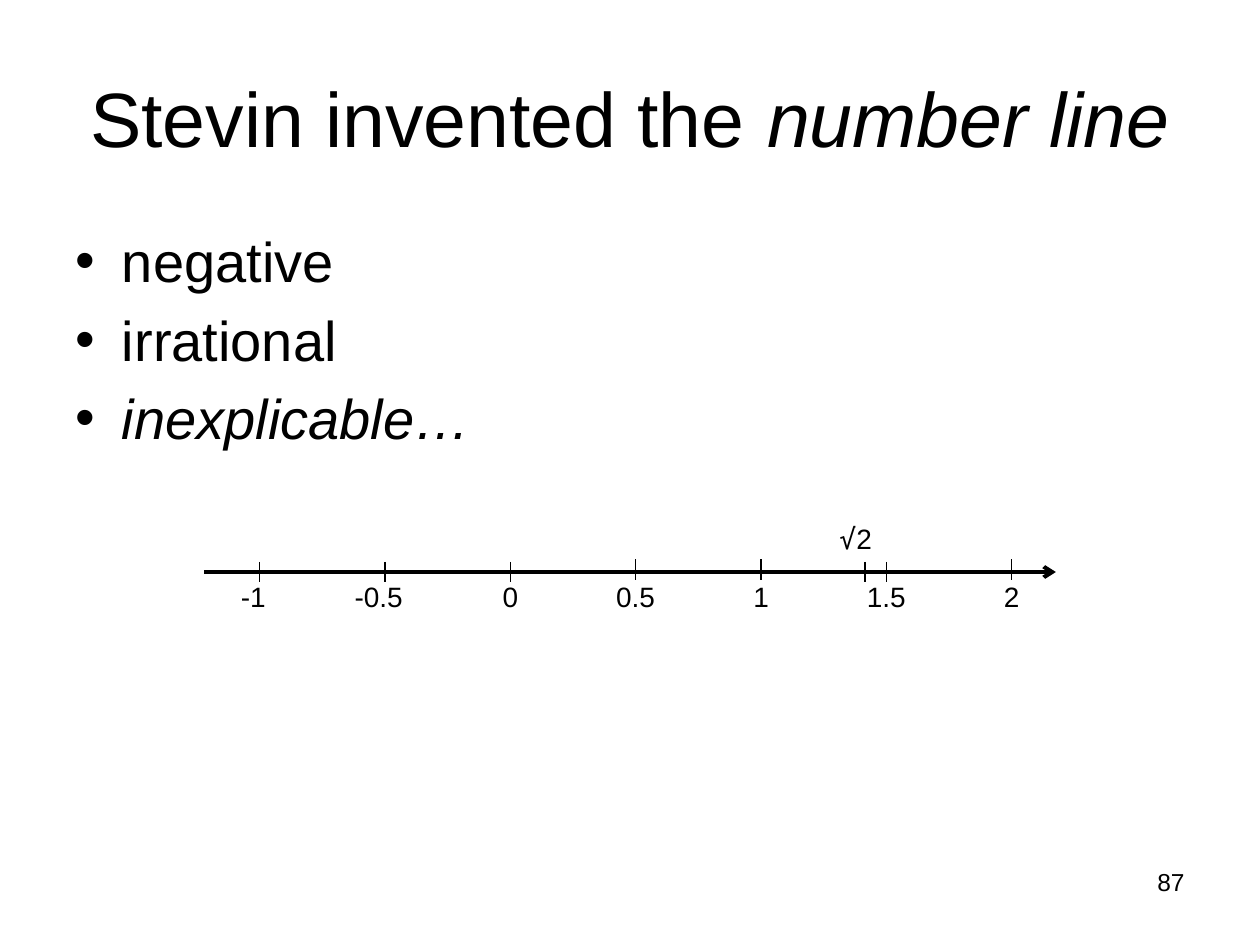
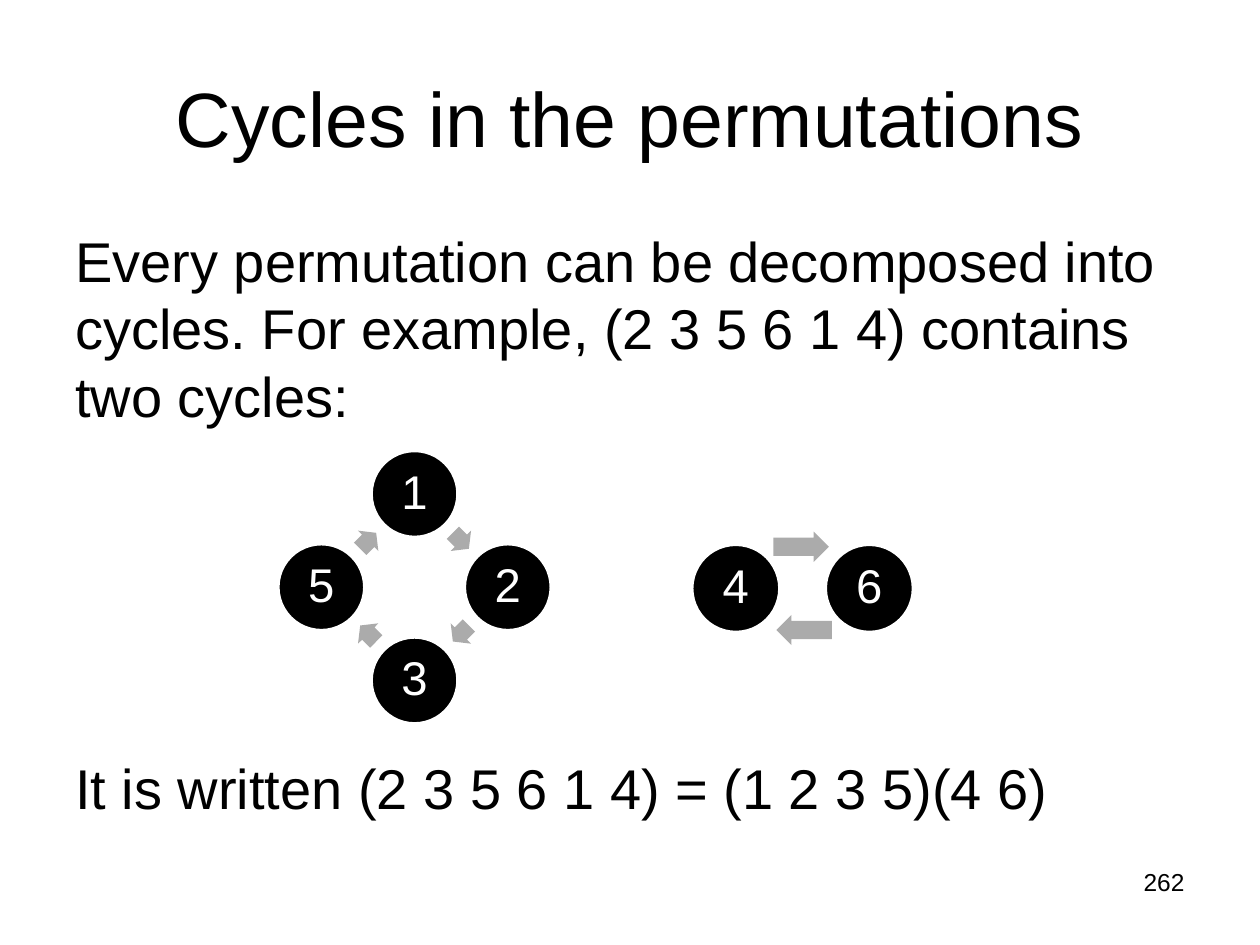
import math

import pptx
import pptx.dml.color
import pptx.enum.shapes
import pptx.enum.text
import pptx.oxml.ns
import pptx.util
from lxml import etree

Inches = pptx.util.Inches
Pt = pptx.util.Pt
RGBColor = pptx.dml.color.RGBColor
Shape = pptx.enum.shapes.MSO_SHAPE
Align = pptx.enum.text.PP_ALIGN
Anchor = pptx.enum.text.MSO_ANCHOR
qn = pptx.oxml.ns.qn

BLACK = RGBColor(0, 0, 0)
WHITE = RGBColor(255, 255, 255)
GRAY = RGBColor(0xAB, 0xAB, 0xAB)
FONT = "Arial"
MATH = "DejaVu Sans Mono"
TITLE = (0.5, 0.3, 9, 1.25)
BODY = (0.5, 1.75, 9, 1.98)
INTRO = (0.5, 1.75, 9, 1.75)
CLOSE = (0.5, 5.93, 9, 0.77)
FOOT = (7.17, 6.83, 2.33, 0.52)


def style(run, size, color=BLACK, name=FONT, italic=False):
    font = run.font
    font.size = Pt(size)
    font.name = name
    font.color.rgb = color
    font.italic = italic


def add_text(slide, box, text, size, align=Align.LEFT, wrap=True):
    frame = slide.shapes.add_textbox(*map(Inches, box)).text_frame
    frame.word_wrap = wrap
    frame.text = text
    for para in frame.paragraphs:
        para.alignment = align
        for run in para.runs:
            style(run, size)
    return frame


def add_line(slide, start, end, width):
    line = slide.shapes.add_connector(
        pptx.enum.shapes.MSO_CONNECTOR.STRAIGHT, *map(Inches, start + end))
    line.line.color.rgb = BLACK
    line.line.width = Pt(width)
    etree.SubElement(line._element.spPr, qn("a:effectLst"))
    return line


def add_slide(deck, title, page, slanted=""):
    """Add a slide with its title, an italic ending to it, and page number."""
    slide = deck.slides.add_slide(deck.slide_layouts[5])
    head = slide.shapes.title
    head.left, head.top, head.width, head.height = map(Inches, TITLE)
    frame = head.text_frame
    frame.vertical_anchor = Anchor.MIDDLE
    para = frame.paragraphs[0]
    para.text = title
    para.alignment = Align.CENTER
    style(para.runs[0], 44)
    if slanted:
        run = para.add_run()
        run.text = slanted
        style(run, 44, italic=True)
    add_text(slide, FOOT, str(page), 14, Align.RIGHT)
    return slide


def add_body(slide, box, lines, bullets=False):
    frame = add_text(slide, box, "\n".join(lines), 32)
    for i, para in enumerate(frame.paragraphs):
        if bullets:
            props = para._p.get_or_add_pPr()
            props.set("marL", str(Inches(0.37)))
            props.set("indent", str(-Inches(0.37)))
            etree.SubElement(props, qn("a:buFont"), typeface=FONT)
            etree.SubElement(props, qn("a:buChar"), char="•")
        para.line_spacing = Pt(38.4)
        if i:
            para.space_before = Pt(6.4)
    return frame


def draw_axis(slide, left, top, width):
    """Draw the number line; zero and the unit follow from its left end."""
    zero, unit = left + 2.43, 1.99
    axis = add_line(slide, (left, top), (left + width, top), 2.25)
    etree.SubElement(axis.line._get_or_add_ln(), qn("a:tailEnd"), type="arrow")

    def tick(value, rise):
        x = zero + unit * value
        add_line(slide, (x, top - rise), (x, top - rise + 0.16), 0.75)
        return x

    for half in range(-2, 5):
        value = half / 2
        x = tick(value, 0.1 if half in (1, 2, 4) else 0.08)
        shift = 0.05 if value < 0 else 0
        add_text(slide, (x - 0.3 - shift, top + 0.01, 0.6, 0.37),
                 f"{value:g}", 16, Align.CENTER, False)

    x = tick(math.sqrt(2), 0.08)
    root = add_text(slide, (x - 0.3, top - 0.45, 0.48, 0.37),
                    "√", 16, wrap=False).paragraphs[0]
    style(root.runs[0], 16, name=MATH)
    digit = root.add_run()
    digit.text = "2"
    style(digit, 16)


def place(slide, kind, middle, size, fill):
    """Add a filled shape centred on a point."""
    box = [m - s / 2 for m, s in zip(middle, size)] + list(size)
    shape = slide.shapes.add_shape(kind, *map(Inches, box))
    shape.shadow.inherit = False
    shape.fill.solid()
    shape.fill.fore_color.rgb = fill
    return shape


def draw_cycle(slide, hub, names, start, radius, reach, disc, arrow, lag=0):
    """Draw nodes at radius and arrows at reach, clockwise around the hub.

    Each arrow sits lag degrees short of halfway between its nodes.
    """
    def polar(angle, dist):
        rad = math.radians(angle)
        return hub[0] + dist * math.cos(rad), hub[1] + dist * math.sin(rad)

    turn = 360 / len(names)
    for i, name in enumerate(names):
        angle = start + turn * i
        node = place(slide, Shape.OVAL, polar(angle, radius), (disc, disc), BLACK)
        node.line.color.rgb = WHITE
        node.line.width = Pt(2)
        frame = node.text_frame
        frame.margin_left = frame.margin_right = Inches(0.04)
        frame.margin_top = frame.margin_bottom = Inches(0.04)
        frame.vertical_anchor = Anchor.MIDDLE
        frame.text = name
        para = frame.paragraphs[0]
        para.alignment = Align.CENTER
        para.line_spacing = 0.9
        style(para.runs[0], 27, WHITE)

        angle += turn / 2
        tip = place(slide, Shape.RIGHT_ARROW, polar(angle - lag, reach), arrow, GRAY)
        tip.line.fill.background()
        tip.adjustments[0] = 0.6
        tip.adjustments[1] = 0.5
        tip.rotation = (angle + 90) % 360


def line_slide(deck):
    slide = add_slide(deck, "Stevin invented the ", 87, "number line")
    frame = add_body(slide, BODY, ["negative", "irrational", "inexplicable…"], True)
    frame.paragraphs[-1].runs[0].font.italic = True
    draw_axis(slide, 1.62, 4.54, 6.76)


def cycle_slide(deck):
    slide = add_slide(deck, "Cycles in the permutations", 262)
    add_body(slide, INTRO, [
        "Every permutation can be decomposed into cycles. "
        "For example, (2 3 5 6 1 4) contains two cycles:"])
    add_body(slide, CLOSE, ["It is written (2 3 5 6 1 4) = (1 2 3 5)(4 6)"])
    draw_cycle(slide, (3.29, 4.66), "1235", -90, 0.74, 0.52, 0.69, (0.18, 0.23))
    draw_cycle(slide, (6.37, 4.67), "46", 180, 0.53, 0.33, 0.7, (0.44, 0.24), 2)


def main():
    deck = pptx.Presentation()
    deck.slide_width = Inches(10)
    deck.slide_height = Inches(7.5)
    line_slide(deck)
    cycle_slide(deck)
    deck.save("out.pptx")


if __name__ == "__main__":
    main()
